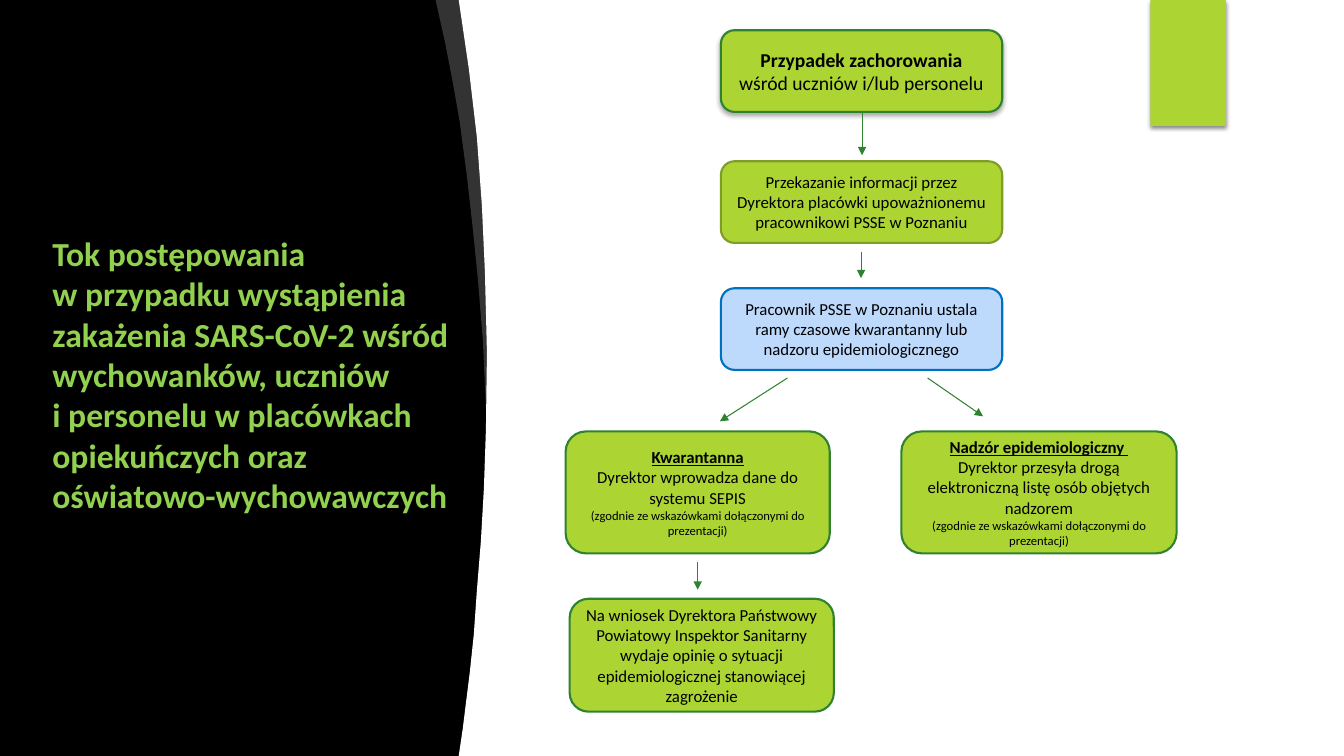
from dataclasses import dataclass

from lxml import etree
from pptx import Presentation
from pptx.dml.color import RGBColor
from pptx.enum.shapes import MSO_CONNECTOR, MSO_SHAPE
from pptx.enum.text import MSO_ANCHOR, MSO_AUTO_SIZE, PP_ALIGN
from pptx.oxml.ns import qn
from pptx.shapes.autoshape import Shape
from pptx.slide import Slide
from pptx.text.text import Font
from pptx.util import Inches, Pt

RECT, ROUND = MSO_SHAPE.RECTANGLE, MSO_SHAPE.ROUNDED_RECTANGLE
STRAIGHT = MSO_CONNECTOR.STRAIGHT
TOP, MIDDLE = MSO_ANCHOR.TOP, MSO_ANCHOR.MIDDLE
LEFT, CENTER = PP_ALIGN.LEFT, PP_ALIGN.CENTER
NO_FIT = MSO_AUTO_SIZE.NONE


@dataclass(frozen=True)
class Theme:
    font: str = "Calibri"
    black: str = "000000"
    white: str = "FFFFFF"
    lime: str = "ACD433"
    title: str = "92D050"
    green: str = "2E8230"
    olive: str = "7F9D26"
    sky: str = "BDD9FB"
    blue: str = "0070C0"
    head: int = 24
    lead: int = 14
    body: int = 12
    note: int = 9


THEME = Theme()


@dataclass(frozen=True)
class Line:
    text: str
    size: int = THEME.body
    bold: bool = False
    under: bool = False


@dataclass(frozen=True)
class Shade:
    alpha: int
    blur: float
    dist: float


@dataclass(frozen=True)
class Step:
    x: float
    y: float
    w: float
    h: float
    lines: tuple[Line, ...]
    fill: str = THEME.lime
    edge: str = THEME.green
    shade: Shade | None = None


@dataclass(frozen=True)
class Arrow:
    x1: float
    y1: float
    x2: float
    y2: float


TITLE = """Tok postępowania
w przypadku wystąpienia zakażenia SARS-CoV-2 wśród wychowanków, uczniów
i personelu w placówkach opiekuńczych oraz oświatowo-wychowawczych"""
HINT = Line("(zgodnie ze wskazówkami dołączonymi do prezentacji)", THEME.note)

STEPS = (
    Step(7.15, 0.3, 2.79, 0.81, (
        Line("Przypadek zachorowania", THEME.lead, bold=True),
        Line("wśród uczniów i/lub personelu", THEME.lead),
    ), shade=Shade(32, 3.5, 2.2)),
    Step(7.15, 1.6, 2.79, 0.81, (
        Line("Przekazanie informacji przez Dyrektora placówki upoważnionemu "
             "pracownikowi PSSE w Poznaniu"),
    ), edge=THEME.olive),
    Step(7.15, 2.86, 2.79, 0.81, (
        Line("Pracownik PSSE w Poznaniu ustala ramy czasowe kwarantanny lub "
             "nadzoru epidemiologicznego"),
    ), fill=THEME.sky, edge=THEME.blue),
    Step(5.61, 4.28, 2.62, 1.21, (
        Line("Kwarantanna", bold=True, under=True),
        Line("Dyrektor wprowadza dane do systemu SEPIS"),
        HINT,
    )),
    Step(5.65, 5.94, 2.62, 1.12, (
        Line("Na wniosek Dyrektora Państwowy Powiatowy Inspektor Sanitarny "
             "wydaje opinię o sytuacji epidemiologicznej stanowiącej "
             "zagrożenie"),
    )),
    Step(8.94, 4.28, 2.73, 1.21, (
        Line("Nadzór epidemiologiczny ", bold=True, under=True),
        Line("Dyrektor przesyła drogą elektroniczną listę osób objętych "
             "nadzorem"),
        HINT,
    )),
)

ARROWS = (
    Arrow(8.55, 1.11, 8.55, 1.54),
    Arrow(8.54, 2.5, 8.54, 2.76),
    Arrow(7.81, 3.75, 7.14, 4.18),
    Arrow(9.2, 3.75, 9.75, 4.13),
    Arrow(6.92, 5.58, 6.92, 5.85),
)

CURVE = (
    (4.55, 0), (4.65, 0.68), (4.73, 1.36), (4.78, 2.04), (4.81, 2.7),
    (4.83, 3.5), (4.82, 4.26), (4.8, 4.84), (4.77, 5.37), (4.73, 5.86),
    (4.7, 6.29), (4.66, 6.67), (4.62, 6.99), (4.59, 7.23), (4.55, 7.5),
)
PANEL = CURVE + ((6.02, 7.5), (6.02, 0))
SLIVER = (
    (4.32, 0), (4.84, 0), (4.88, 0.7), (4.92, 1.9), (4.92, 3.2), (4.89, 4.02),
    (4.82, 4.06), (4.79, 3.38), (4.74, 2.77), (4.69, 2.27), (4.63, 1.74),
    (4.56, 1.21), (4.49, 0.81), (4.41, 0.4),
)


def color(code: str) -> RGBColor:
    return RGBColor.from_string(code)


def paint(shape: Shape, fill: str, edge: str | None = None) -> None:
    shape.shadow.inherit = False
    shape.fill.solid()
    shape.fill.fore_color.rgb = color(fill)
    if edge is None:
        shape.line.fill.background()
    else:
        shape.line.color.rgb = color(edge)
        shape.line.width = Pt(1.5)


def cast(shape: Shape, shade: Shade) -> None:
    """Give the shape a black shadow that falls straight down."""
    effects = shape._element.spPr.find(qn("a:effectLst"))
    outer = etree.SubElement(
        effects, qn("a:outerShdw"), blurRad=str(Pt(shade.blur)),
        dist=str(Pt(shade.dist)), dir="5400000", rotWithShape="0")
    tint = etree.SubElement(outer, qn("a:srgbClr"), val=THEME.black)
    etree.SubElement(tint, qn("a:alpha"), val=str(shade.alpha * 1000))


def style(font: Font, size: int, code: str, bold: bool) -> None:
    font.name = THEME.font
    font.size = Pt(size)
    font.bold = bold
    font.color.rgb = color(code)


def draw_block(slide: Slide, kind: MSO_SHAPE, x: float, y: float,
               w: float, h: float, fill: str, edge: str | None = None) -> Shape:
    shape = slide.shapes.add_shape(
        kind, Inches(x), Inches(y), Inches(w), Inches(h))
    paint(shape, fill, edge)
    return shape


def draw_form(slide: Slide, points: tuple[tuple[float, float], ...]) -> Shape:
    spots = [(Inches(x), Inches(y)) for x, y in points]
    pen = slide.shapes.build_freeform(*spots[0])
    pen.add_line_segments(spots[1:], close=True)
    shape = pen.convert_to_shape()
    paint(shape, THEME.white)
    return shape


def draw_title(slide: Slide) -> None:
    title = slide.shapes.title
    title.left, title.top = Inches(0.42), Inches(2.26)
    title.width, title.height = Inches(4.2), Inches(3.22)
    frame = title.text_frame
    frame.text = TITLE
    frame.word_wrap = True
    frame.auto_size = NO_FIT
    frame.vertical_anchor = TOP
    for para in frame.paragraphs:
        para.alignment = LEFT
        for run in para.runs:
            style(run.font, THEME.head, THEME.title, True)


def draw_step(slide: Slide, step: Step) -> None:
    shape = draw_block(slide, ROUND, step.x, step.y, step.w, step.h,
                       step.fill, step.edge)
    if step.shade:
        cast(shape, step.shade)
    frame = shape.text_frame
    frame.text = "\n".join(line.text for line in step.lines)
    frame.word_wrap = True
    frame.vertical_anchor = MIDDLE
    for para, line in zip(frame.paragraphs, step.lines):
        para.alignment = CENTER
        for run in para.runs:
            style(run.font, line.size, THEME.black, line.bold)
            run.font.underline = line.under


def draw_arrow(slide: Slide, arrow: Arrow) -> None:
    link = slide.shapes.add_connector(
        STRAIGHT, Inches(arrow.x1), Inches(arrow.y1),
        Inches(arrow.x2), Inches(arrow.y2))
    link.line.color.rgb = color(THEME.green)
    link.line.width = Pt(0.75)
    etree.SubElement(link.line._get_or_add_ln(), qn("a:tailEnd"),
                     type="triangle")
    etree.SubElement(link._element.spPr, qn("a:effectLst"))


def main() -> None:
    deck = Presentation()
    deck.slide_width, deck.slide_height = Inches(13.33), Inches(7.5)
    slide = deck.slides.add_slide(deck.slide_layouts[5])
    slide.background.fill.solid()
    slide.background.fill.fore_color.rgb = color(THEME.black)

    sliver = draw_form(slide, SLIVER)
    tint = sliver._element.spPr.find(qn("a:solidFill"))[0]
    etree.SubElement(tint, qn("a:alpha"), val="20000")
    draw_block(slide, RECT, 5.07, 0, 8.26, 7.5, THEME.white)
    draw_form(slide, PANEL)
    tab = draw_block(slide, RECT, 11.41, 0, 0.75, 1.25, THEME.lime)
    cast(tab, Shade(45, 3, 2))

    draw_title(slide)
    for step in STEPS:
        draw_step(slide, step)
    for arrow in ARROWS:
        draw_arrow(slide, arrow)
    deck.save("out.pptx")


if __name__ == "__main__":
    main()
